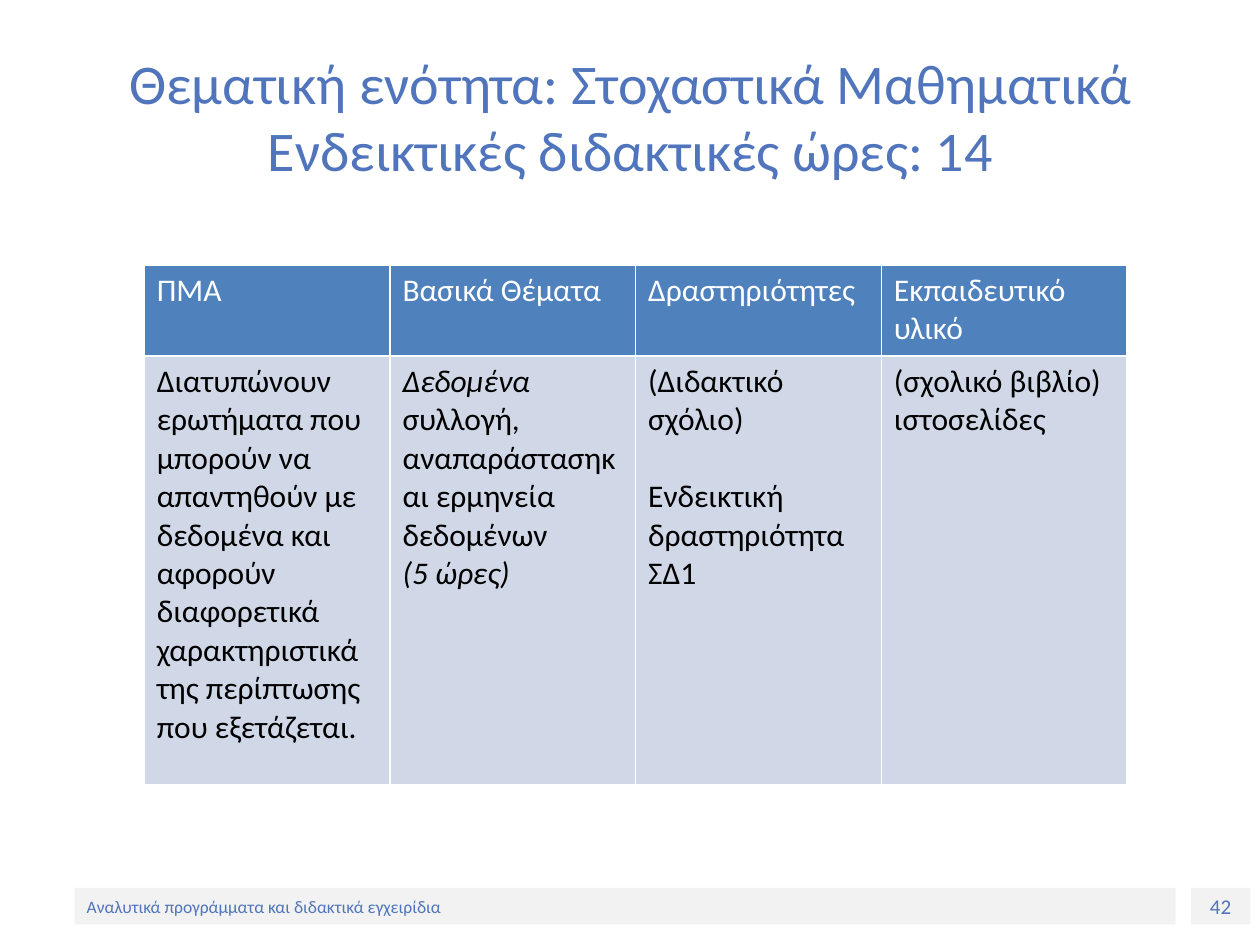
from lxml.etree import SubElement
from pptx import Presentation
from pptx.dml.color import RGBColor
from pptx.enum.shapes import MSO_SHAPE as Preset
from pptx.enum.text import MSO_ANCHOR as Anchor, MSO_AUTO_SIZE as AutoSize, PP_ALIGN as Align
from pptx.oxml.ns import qn
from pptx.util import Pt

BLUE = RGBColor(0x50, 0x75, 0xBC)
HEADER_BLUE = RGBColor(0x4F, 0x81, 0xBD)
PALE_BLUE = RGBColor(0xD0, 0xD8, 0xE8)
PALE_GREY = RGBColor(0xF2, 0xF2, 0xF2)
WHITE = RGBColor(0xFF, 0xFF, 0xFF)
BLACK = RGBColor(0, 0, 0)

TITLE = "Θεματική ενότητα: Στοχαστικά Μαθηματικά\vΕνδεικτικές διδακτικές ώρες: 14"
HEADINGS = ["ΠΜΑ", "Βασικά Θέματα", "Δραστηριότητες", "Εκπαιδευτικό υλικό"]
# Each cell is a list of paragraphs: text and its format
BODY = [
    [("Διατυπώνουν ερωτήματα που μπορούν να απαντηθούν με δεδομένα και αφορούν \v"
      "διαφορετικά χαρακτηριστικά της περίπτωσης που εξετάζεται.", {})],
    [("Δεδομένα", {"italic": True}),
     ("συλλογή, αναπαράστασηκαι ερμηνεία δεδομένων", {}),
     ("(5 ώρες)", {"italic": True})],
    [("(Διδακτικό σχόλιο)", {}),
     ("Ενδεικτική δραστηριότητα ΣΔ1", {"gap": 22})],
    [("(σχολικό βιβλίο)", {}), ("ιστοσελίδες", {})],
]


class SlideBuilder:
    font = "Calibri"

    def __init__(self, slide):
        self.slide = slide

    def set_text(self, paragraph, text, size, color, align=Align.LEFT, gap=0, **styles):
        paragraph.text = text
        paragraph.alignment = align
        paragraph.space_before = Pt(gap)
        values = {"name": self.font, "size": Pt(size), "bold": False, "italic": False, **styles}
        for run in paragraph.runs:
            run.font.color.rgb = color
            for name, value in values.items():
                setattr(run.font, name, value)

    def title(self, text, left, top, width, height):
        title = self.slide.shapes.title
        place = {"left": left, "top": top, "width": width, "height": height}
        for name, value in place.items():
            setattr(title, name, Pt(value))
        frame = title.text_frame
        frame.auto_size = AutoSize.NONE
        frame.vertical_anchor = Anchor.MIDDLE
        self.set_text(frame.paragraphs[0], text, 32, BLUE, Align.CENTER)

    def bar(self, text, left, top, width, height, size, align):
        bar = self.slide.shapes.add_shape(
            Preset.RECTANGLE, Pt(left), Pt(top), Pt(width), Pt(height))
        bar.shadow.inherit = False
        bar.fill.solid()
        bar.fill.fore_color.rgb = PALE_GREY
        bar.line.fill.background()
        bar.text_frame.word_wrap = True
        bar.text_frame.vertical_anchor = Anchor.MIDDLE
        self.set_text(bar.text_frame.paragraphs[0], text, size, BLUE, align)

    def borders(self, cell, color, width):
        properties = cell._tc.get_or_add_tcPr()
        for side in ("lnL", "lnR", "lnT", "lnB"):
            line = SubElement(properties, qn(f"a:{side}"), w=str(Pt(width)))
            fill = SubElement(line, qn("a:solidFill"))
            SubElement(fill, qn("a:srgbClr"), val=str(color))

    def cell(self, cell, paragraphs, fill, color):
        self.borders(cell, WHITE, 1)
        cell.fill.solid()
        cell.fill.fore_color.rgb = fill
        frame = cell.text_frame
        for index, (text, styles) in enumerate(paragraphs):
            paragraph = frame.add_paragraph() if index else frame.paragraphs[0]
            self.set_text(paragraph, text, 18, color, **styles)

    def table(self, headings, body, left, top, column_width, row_heights):
        table = self.slide.shapes.add_table(
            len(row_heights), len(headings), Pt(left), Pt(top),
            Pt(column_width * len(headings)), Pt(sum(row_heights))).table
        for row, height in zip(table.rows, row_heights):
            row.height = Pt(height)
        for index, (heading, paragraphs) in enumerate(zip(headings, body)):
            table.columns[index].width = Pt(column_width)
            self.cell(table.cell(0, index), [(heading, {})], HEADER_BLUE, WHITE)
            self.cell(table.cell(1, index), paragraphs, PALE_BLUE, BLACK)


def main():
    deck = Presentation()
    deck.slide_width, deck.slide_height = Pt(720), Pt(540)
    title_only = deck.slide_layouts[5]
    builder = SlideBuilder(deck.slides.add_slide(title_only))
    builder.bar("42", 680.5, 507.3, 34, 21, 12, Align.CENTER)
    builder.bar("Αναλυτικά προγράμματα και διδακτικά εγχειρίδια",
                42.5, 507.3, 629.3, 21, 10, Align.LEFT)
    builder.title(TITLE, 36.5, 21, 648, 90)
    builder.table(HEADINGS, BODY, 82.4, 151.4, 140.4, [52, 245])
    deck.save("out.pptx")


if __name__ == "__main__":
    main()
